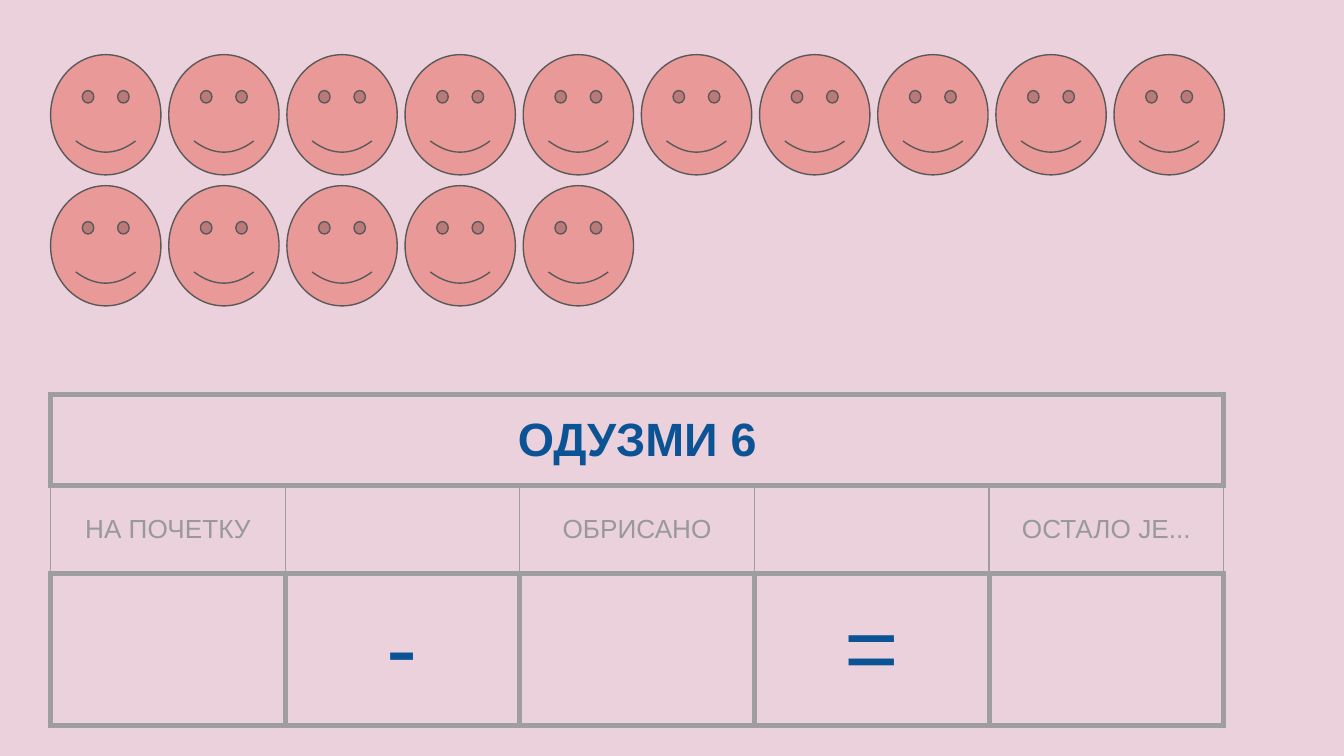
from lxml.etree import SubElement
from pptx import Presentation
from pptx.dml.color import RGBColor as Rgb
from pptx.enum.shapes import MSO_SHAPE as Shape
from pptx.enum.text import MSO_ANCHOR as Anchor, PP_ALIGN as Align
from pptx.oxml.ns import qn
from pptx.util import Pt

HUES = {"back": "EAD1DC", "face": "EA9999", "edge": "595959",
        "grid": "9E9E9E", "label": "999999", "blue": "0B5394"}
LEFT = 27.1
FACE = {"wide": 59.1, "high": 64.4, "top": 29.3, "step_x": 63.3, "step_y": 70.2}
FACES = [10, 5]

COL = 125.7
TOP = 211.4
ROWS = [
    {"high": 48.7, "texts": ["ОДУЗМИ 6", "", "", "", ""], "side": 3,
     "font": {"size": Pt(25), "bold": True}, "hue": "blue"},
    {"high": 47.2, "texts": ["НА ПОЧЕТКУ", "", "ОБРИСАНО", "", "ОСТАЛО ЈЕ..."],
     "side": 0.75, "font": {"size": Pt(14), "bold": False}, "hue": "label"},
    {"high": 81.4, "texts": ["", "-", "", "=", ""], "side": 3,
     "font": {"size": Pt(50), "bold": False}, "hue": "blue"},
]


def hue(name):
    return Rgb.from_string(HUES[name])


def assign(item, values):
    for key, value in values.items():
        setattr(item, key, value)


def add_face(slide, col, row):
    face = slide.shapes.add_shape(
        Shape.SMILEY_FACE,
        Pt(LEFT + col * FACE["step_x"]), Pt(FACE["top"] + row * FACE["step_y"]),
        Pt(FACE["wide"]), Pt(FACE["high"]))
    face.shadow.inherit = False
    face.fill.solid()
    face.fill.fore_color.rgb = hue("face")
    face.line.color.rgb = hue("edge")
    face.line.width = Pt(0.75)


def add_edges(cell, side):
    """Draw thick top and bottom borders, with sides of the given width."""
    props = cell._tc.get_or_add_tcPr()
    for tag, width in (("lnL", side), ("lnR", side), ("lnT", 3), ("lnB", 3)):
        line = SubElement(props, qn(f"a:{tag}"), w=str(Pt(width)))
        fill = SubElement(line, qn("a:solidFill"))
        SubElement(fill, qn("a:srgbClr"), val=HUES["grid"])


def fill_cell(cell, text, row):
    add_edges(cell, row["side"])
    cell.fill.background()
    inset = Pt(7.2)
    assign(cell, {"vertical_anchor": Anchor.MIDDLE,
                  "margin_left": inset, "margin_right": inset,
                  "margin_top": inset, "margin_bottom": inset})
    if text:
        para = cell.text_frame.paragraphs[0]
        para.alignment = Align.CENTER
        run = para.add_run()
        run.text = text
        assign(run.font, {"name": "Arial", **row["font"]})
        run.font.color.rgb = hue(row["hue"])


def add_sum(slide):
    count = len(ROWS[0]["texts"])
    high = sum(row["high"] for row in ROWS)
    table = slide.shapes.add_table(len(ROWS), count, Pt(LEFT), Pt(TOP),
                                   Pt(COL * count), Pt(high)).table
    assign(table, {"first_row": False, "horz_banding": False})
    for col in table.columns:
        col.width = Pt(COL)
    for r, row in enumerate(ROWS):
        table.rows[r].height = Pt(row["high"])
        for c, text in enumerate(row["texts"]):
            fill_cell(table.cell(r, c), text, row)
    table.cell(0, 0).merge(table.cell(0, count - 1))


def main():
    deck = Presentation()
    assign(deck, {"slide_width": Pt(720), "slide_height": Pt(405)})
    slide = deck.slides.add_slide(deck.slide_layouts[6])
    slide.background.fill.solid()
    slide.background.fill.fore_color.rgb = hue("back")
    add_sum(slide)
    for row, count in enumerate(FACES):
        for col in range(count):
            add_face(slide, col, row)
    deck.save("out.pptx")


if __name__ == "__main__":
    main()
